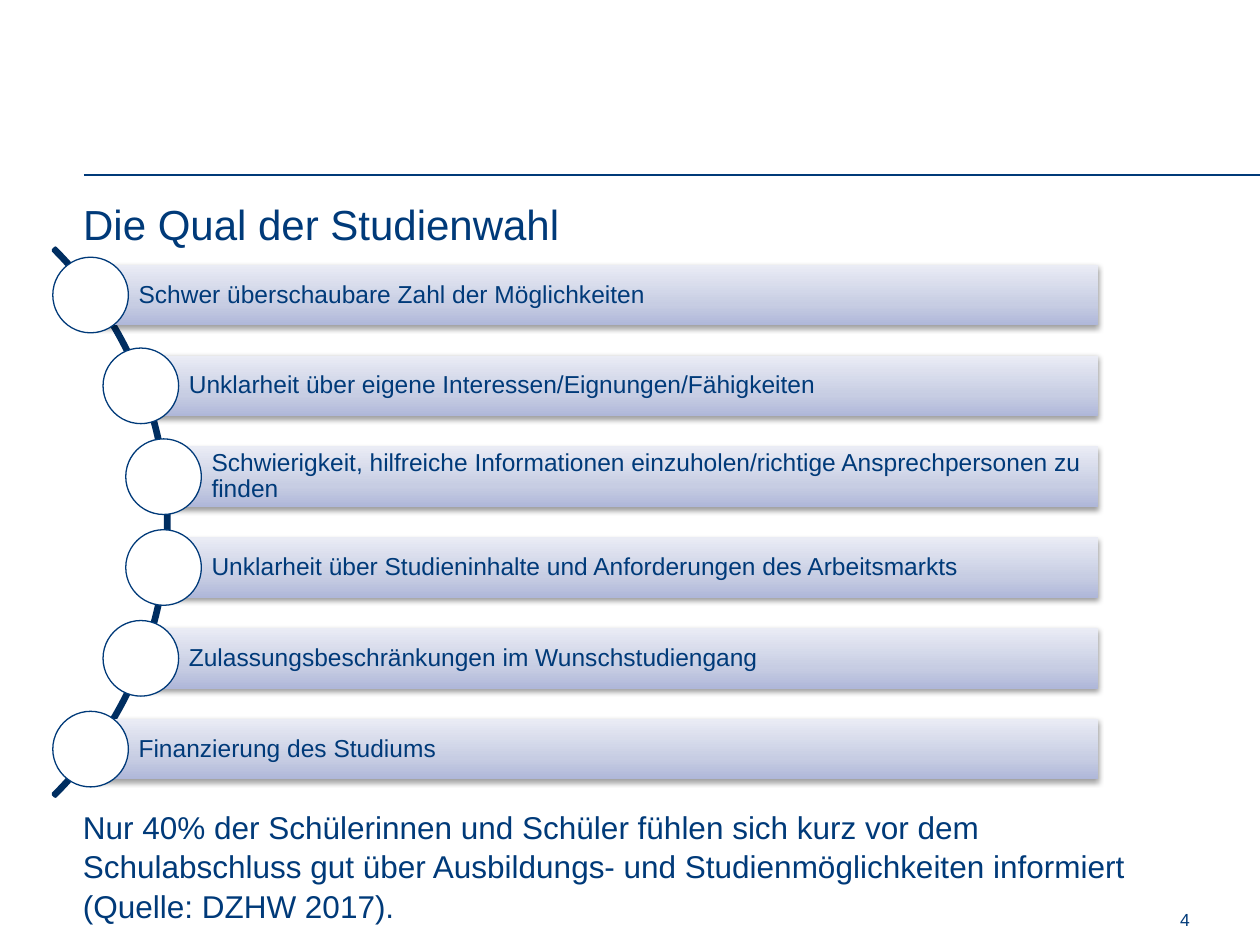
from copy import deepcopy
from dataclasses import dataclass

from lxml import etree
from pptx import Presentation
from pptx.dml.color import RGBColor
from pptx.enum.shapes import MSO_CONNECTOR, MSO_SHAPE
from pptx.enum.text import MSO_ANCHOR, MSO_AUTO_SIZE, PP_ALIGN
from pptx.oxml.ns import qn
from pptx.util import Pt

LEFT, RIGHT = PP_ALIGN.LEFT, PP_ALIGN.RIGHT
TOP, MIDDLE = MSO_ANCHOR.TOP, MSO_ANCHOR.MIDDLE
NO_AUTOFIT = MSO_AUTO_SIZE.NONE
RECTANGLE, OVAL, BLOCK_ARC = MSO_SHAPE.RECTANGLE, MSO_SHAPE.OVAL, MSO_SHAPE.BLOCK_ARC
STRAIGHT = MSO_CONNECTOR.STRAIGHT
TITLE_ONLY = 5


@dataclass(frozen=True)
class Theme:
    font: str = "Arial"
    navy: str = "003A79"
    dark_navy: str = "002E61"
    white: str = "FFFFFF"
    bar_gradient: tuple = ((0, "AFB7D9"), (0.35, "C7CDE3"), (1, "EAECF5"))
    title_size: float = 24
    body_size: float = 18
    bar_size: float = 14
    number_size: float = 10


class SlideBuilder:
    def __init__(self, slide, theme):
        self.slide = slide
        self.theme = theme

    def set_text(self, shape, text, size, align=LEFT, anchor=TOP,
                 insets=(7.2, 3.6, 7.2, 3.6), spacing=1.0):
        frame = shape.text_frame
        frame.text = text
        frame.word_wrap = True
        frame.auto_size = NO_AUTOFIT
        frame.vertical_anchor = anchor
        (frame.margin_left, frame.margin_top,
         frame.margin_right, frame.margin_bottom) = map(Pt, insets)
        paragraph = frame.paragraphs[0]
        paragraph.alignment = align
        paragraph.line_spacing = spacing
        paragraph.font.name = self.theme.font
        paragraph.font.size = Pt(size)
        paragraph.font.color.rgb = RGBColor.from_string(self.theme.navy)

    def title(self, text, left, top, width, height):
        shape = self.slide.shapes.title
        shape.left, shape.top, shape.width, shape.height = map(Pt, (left, top, width, height))
        self.set_text(shape, text, self.theme.title_size)

    def text(self, text, left, top, width, height, size, **options):
        box = self.slide.shapes.add_textbox(*map(Pt, (left, top, width, height)))
        self.set_text(box, text, size, **options)

    def rule(self, left, right, top):
        line = self.slide.shapes.add_connector(STRAIGHT, Pt(left), Pt(top), Pt(right), Pt(top))
        line.line.color.rgb = RGBColor.from_string(self.theme.navy)
        line.line.width = Pt(0.75)
        etree.SubElement(line._element.spPr, qn("a:effectLst"))

    def outlined(self, kind, left, top, size, fill, line, weight):
        shape = self.slide.shapes.add_shape(kind, *map(Pt, (left, top, size, size)))
        shape.shadow.inherit = False
        shape.fill.solid()
        shape.fill.fore_color.rgb = RGBColor.from_string(fill)
        shape.line.color.rgb = RGBColor.from_string(line)
        shape.line.width = Pt(weight)
        return shape

    def arc(self, left, top, size):
        color = self.theme.dark_navy
        shape = self.outlined(BLOCK_ARC, left, top, size, color, color, 2)
        for index, value in enumerate((189, 27, 0.004)):
            shape.adjustments[index] = value

    def circle(self, center_x, center_y, size):
        self.outlined(OVAL, center_x - size / 2, center_y - size / 2, size,
                      self.theme.white, self.theme.navy, 0.75)

    def bar(self, text, left, top, width, height):
        shape = self.slide.shapes.add_shape(RECTANGLE, *map(Pt, (left, top, width, height)))
        shape.line.fill.background()
        self.gradient(shape)
        self.soft_shadow(shape)
        self.set_text(shape, text, self.theme.bar_size, anchor=MIDDLE,
                      insets=(27.4, 2.9, 2.9, 2.9), spacing=0.9)

    def gradient(self, shape):
        shape.fill.gradient()
        shape.fill.gradient_angle = 90
        stop_list = shape._element.spPr.find(".//" + qn("a:gsLst"))
        stop_list.insert(1, deepcopy(stop_list[0]))
        for stop, (position, color) in zip(shape.fill.gradient_stops, self.theme.bar_gradient):
            stop.position = position
            stop.color.rgb = RGBColor.from_string(color)

    def soft_shadow(self, shape):
        shape.shadow.inherit = False
        effects = shape._element.spPr.find(qn("a:effectLst"))
        shadow = etree.SubElement(effects, qn("a:outerShdw"), blurRad=str(int(Pt(3.1))),
                                  dist=str(int(Pt(1.6))), dir="5400000", rotWithShape="0")
        color = etree.SubElement(shadow, qn("a:srgbClr"), val="000000")
        etree.SubElement(color, qn("a:alpha"), val="38000")


# Each reason with the horizontal centre of its circle, where its bar begins
REASONS = [
    ("Schwer überschaubare Zahl der Möglichkeiten", 51.8),
    ("Unklarheit über eigene Interessen/Eignungen/Fähigkeiten", 80.5),
    ("Schwierigkeit, hilfreiche Informationen einzuholen/richtige "
     "Ansprechpersonen zu finden", 93.5),
    ("Unklarheit über Studieninhalte und Anforderungen des Arbeitsmarkts", 93.5),
    ("Zulassungsbeschränkungen im Wunschstudiengang", 80.5),
    ("Finanzierung des Studiums", 51.8),
]
FIRST_CENTER, PITCH = 168.6, 51.9
BAR_RIGHT, BAR_HEIGHT, CIRCLE_SIZE = 627.5, 34.6, 43.2


def main():
    presentation = Presentation()
    presentation.slide_width, presentation.slide_height = Pt(720), Pt(540)
    slide = presentation.slides.add_slide(presentation.slide_layouts[TITLE_ONLY])
    theme = Theme()
    builder = SlideBuilder(slide, theme)

    # Header
    builder.rule(48, 720, 100)
    builder.title("Die Qual der Studienwahl", 40.3, 110, 643.7, 48)

    # Reasons along the arc
    builder.arc(-346.3, 77, 442.8)
    for index, (reason, left) in enumerate(REASONS):
        center_y = FIRST_CENTER + index * PITCH
        builder.bar(reason, left, center_y - BAR_HEIGHT / 2, BAR_RIGHT - left, BAR_HEIGHT)
        builder.circle(left, center_y, CIRCLE_SIZE)

    # Conclusion and slide number
    builder.text("Nur 40% der Schülerinnen und Schüler fühlen sich kurz vor dem "
                 "Schulabschluss gut über Ausbildungs- und Studienmöglichkeiten "
                 "informiert (Quelle: DZHW 2017).",
                 40.3, 457.4, 637.2, 74, theme.body_size, spacing=1.04)
    builder.text("4", 638, 516.2, 49, 23.8, theme.number_size, align=RIGHT)

    presentation.save("out.pptx")


if __name__ == "__main__":
    main()
